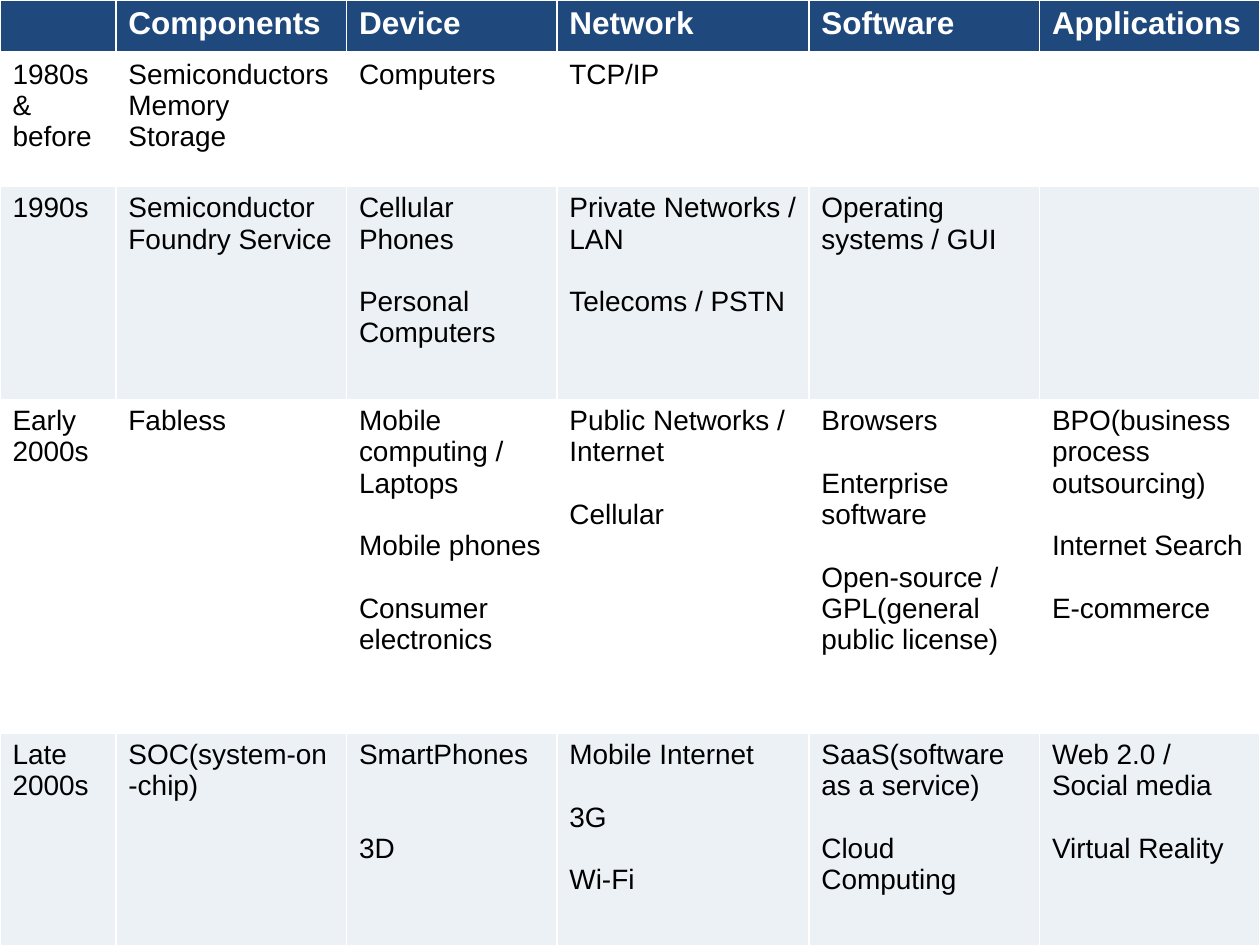
from dataclasses import dataclass
from typing import NamedTuple

from lxml.etree import SubElement
from pptx import Presentation
from pptx.dml.color import RGBColor as RGB
from pptx.oxml.ns import qn
from pptx.util import Inches, Pt


@dataclass(frozen=True)
class Theme:
    font: str = "Arial"
    header_size: int = 18
    body_size: int = 16
    line_gap: int = 18
    header_fill: str = "1F497D"
    header_text: str = "FFFFFF"
    body_text: str = "000000"
    band_fills: tuple[str, str] = ("FFFFFF", "ECF1F5")
    rule: str = "FFFFFF"
    thin_rule: int = 1
    thick_rule: int = 3


class Era(NamedTuple):
    """One row of the table; a blank line in an entry is a gap of one line."""
    period: str
    components: str = ""
    device: str = ""
    network: str = ""
    software: str = ""
    applications: str = ""


THEME = Theme()
COLUMN_WIDTHS = (0.92, 1.83, 1.67, 2, 1.83, 1.75)
ROW_HEIGHTS = (0.42, 1.06, 1.69, 2.65, 1.69)
HEADINGS = Era("", "Components", "Device", "Network", "Software", "Applications")
ERAS = (
    Era("1980s & before", "Semiconductors\nMemory\nStorage", "Computers", "TCP/IP"),
    Era("1990s", "Semiconductor Foundry Service",
        "Cellular Phones\n\nPersonal Computers",
        "Private Networks / LAN\n\nTelecoms / PSTN",
        "Operating systems / GUI"),
    Era("Early 2000s", "Fabless",
        "Mobile computing / Laptops\n\nMobile phones\n\nConsumer electronics",
        "Public Networks / Internet\n\nCellular",
        "Browsers\n\nEnterprise software\n\n"
        "Open-source / GPL(general public license)",
        "BPO(business process outsourcing)\n\nInternet Search\n\nE-commerce"),
    Era("Late 2000s", "SOC(system-on\n-chip)",
        "SmartPhones\n\n\n3D",
        "Mobile Internet\n\n3G\n\nWi-Fi",
        "SaaS(software as a service)\n\nCloud Computing",
        "Web 2.0 / Social media\n\nVirtual Reality"),
)


def write_text(frame, text: str, *, size: int, color: str, bold: bool = False) -> None:
    """Write one paragraph per line, turning blank lines into space before."""
    gaps = 0
    paragraph = frame.paragraphs[0]
    for line in text.split("\n"):
        if not line:
            gaps += 1
            continue
        if paragraph.runs:
            paragraph = frame.add_paragraph()
        if gaps:
            paragraph.space_before = Pt(gaps * THEME.line_gap)
        gaps = 0
        run = paragraph.add_run()
        run.text = line
        run.font.name = THEME.font
        run.font.size = Pt(size)
        run.font.bold = bold
        run.font.color.rgb = RGB.from_string(color)


def draw_borders(cell, *, top: int, bottom: int) -> None:
    properties = cell._tc.get_or_add_tcPr()
    widths = {"L": THEME.thin_rule, "R": THEME.thin_rule, "T": top, "B": bottom}
    for side, width in widths.items():
        line = SubElement(properties, qn(f"a:ln{side}"), w=str(Pt(width)))
        fill = SubElement(line, qn("a:solidFill"))
        SubElement(fill, qn("a:srgbClr"), val=THEME.rule)


def draw_row(table, row: int, entries: Era) -> None:
    is_header = row == 0
    fill = THEME.header_fill if is_header else THEME.band_fills[(row - 1) % 2]
    text_format = {
        "size": THEME.header_size if is_header else THEME.body_size,
        "color": THEME.header_text if is_header else THEME.body_text,
        "bold": is_header,
    }
    for column, entry in enumerate(entries):
        cell = table.cell(row, column)
        draw_borders(cell,
                     top=THEME.thick_rule if row == 1 else THEME.thin_rule,
                     bottom=THEME.thick_rule if is_header else THEME.thin_rule)
        cell.fill.solid()
        cell.fill.fore_color.rgb = RGB.from_string(fill)
        write_text(cell.text_frame, entry, **text_format)


def draw_timeline(slide) -> None:
    table = slide.shapes.add_table(
        len(ROW_HEIGHTS), len(COLUMN_WIDTHS), Inches(0), Inches(0),
        Inches(sum(COLUMN_WIDTHS)), Inches(sum(ROW_HEIGHTS))).table
    table.horz_banding = False
    for column, width in zip(table.columns, COLUMN_WIDTHS):
        column.width = Inches(width)
    for row, height in zip(table.rows, ROW_HEIGHTS):
        row.height = Inches(height)
    for index, entries in enumerate((HEADINGS, *ERAS)):
        draw_row(table, index, entries)


def main() -> None:
    presentation = Presentation()
    presentation.slide_width = Inches(10)
    presentation.slide_height = Inches(7.5)
    blank_layout = presentation.slide_layouts[6]
    draw_timeline(presentation.slides.add_slide(blank_layout))
    presentation.save("out.pptx")


if __name__ == "__main__":
    main()
